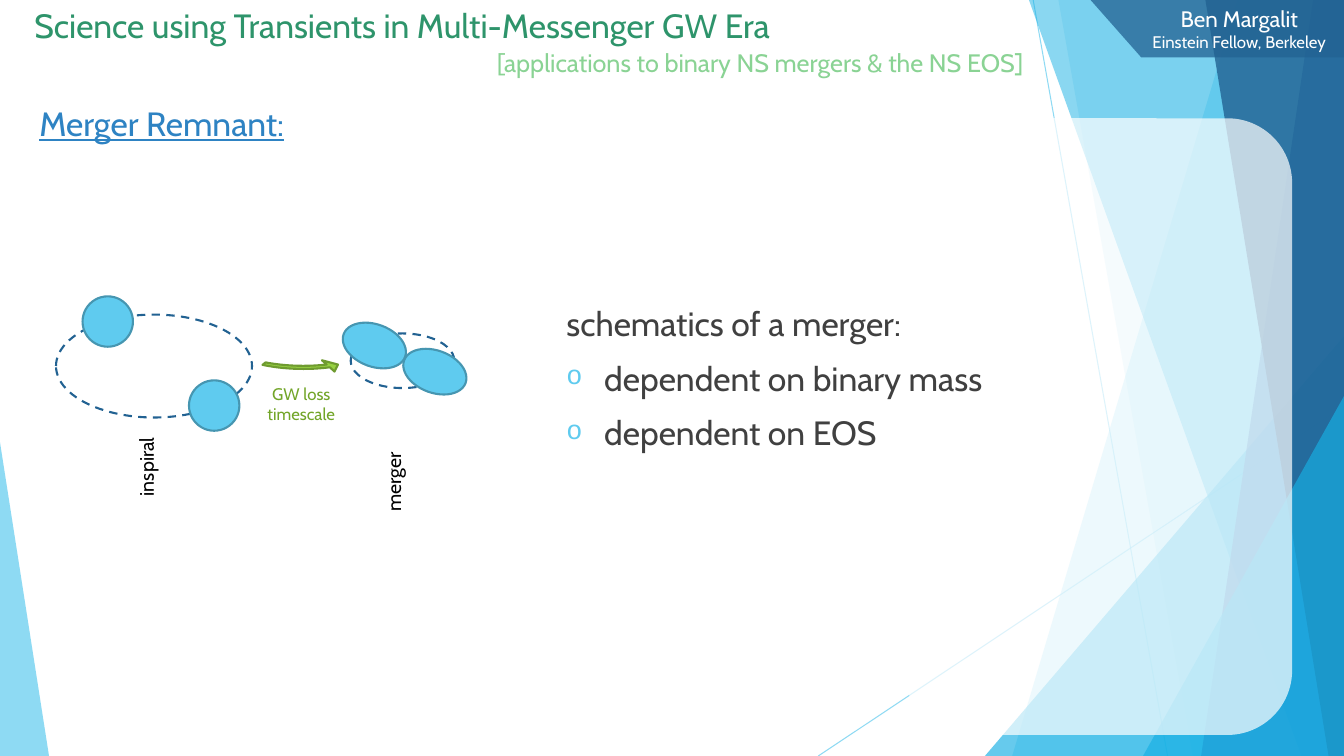
from pptx import Presentation
from pptx.dml.color import RGBColor
from pptx.enum.dml import MSO_LINE
from pptx.enum.shapes import MSO_CONNECTOR, MSO_SHAPE
from pptx.enum.text import MSO_ANCHOR, PP_ALIGN
from pptx.oxml.ns import qn
from pptx.util import Pt
from lxml.etree import SubElement

FONT = "Cabin"
C = {"sky": "5FCBEF", "cyan": "17B0E4", "blue": "2E83C3", "navy": "226292",
     "rim": "4696B1", "white": "FFFFFF", "black": "000000", "body": "404040",
     "title": "2E946B", "subtitle": "8AD394", "arrow": "96D141",
     "arrow_rim": "6F9B30", "caption": "72A528"}


def set_alpha(fill_element, percent):
    color = next(fill_element.iter(qn("a:srgbClr")))
    SubElement(color, qn("a:alpha")).set("val", str(percent * 1000))


def paint(sp, fill=None, alpha=100, line=None, dashed=False):
    sp.shadow.inherit = False
    if fill:
        sp.fill.solid()
        sp.fill.fore_color.rgb = RGBColor.from_string(C[fill])
        if alpha < 100:
            set_alpha(sp._element.spPr.find(qn("a:solidFill")), alpha)
    else:
        sp.fill.background()
    if line:
        sp.line.color.rgb = RGBColor.from_string(C[line])
        sp.line.width = Pt(1.5)
        if dashed:
            sp.line.dash_style = MSO_LINE.DASH
    else:
        sp.line.fill.background()


def add_preset(s, kind, x, y, w, h, rotation=0, **style):
    sp = s.shapes.add_shape(kind, Pt(x), Pt(y), Pt(w), Pt(h))
    sp.rotation = rotation
    paint(sp, **style)
    return sp


def add_run(p, text, size, color, underline=None):
    r = p.add_run()
    r.text = text
    r.font.name = FONT
    r.font.size = Pt(size)
    r.font.color.rgb = RGBColor.from_string(C[color])
    r.font.underline = underline


def add_text(s, x, y, w, h, text, size, color, align=PP_ALIGN.CENTER,
             rotation=0, underline=None):
    """Add a wrapped text box and return its first paragraph and text frame."""
    sp = s.shapes.add_textbox(Pt(x), Pt(y), Pt(w), Pt(h))
    sp.rotation = rotation
    tf = sp.text_frame
    tf.word_wrap = True
    p = tf.paragraphs[0]
    p.alignment = align
    add_run(p, text, size, color, underline)
    return p, tf


def add_ray(s, x1, y1, x2, y2):
    line = s.shapes.add_connector(MSO_CONNECTOR.STRAIGHT, Pt(x1), Pt(y1), Pt(x2), Pt(y2))
    line.line.color.rgb = RGBColor.from_string(C["sky"])
    line.line.width = Pt(0.75)
    sppr = line._element.spPr
    set_alpha(sppr.find(qn("a:ln")), 70)
    SubElement(sppr, qn("a:effectLst"))


def add_slanted_band(s, top, bottom, right, height, color, alpha):
    """Fill from a slanted left edge to the right side of the slide."""
    builder = s.shapes.build_freeform(Pt(top), 0)
    builder.add_line_segments([(Pt(right), 0), (Pt(right), Pt(height)),
                               (Pt(bottom), Pt(height))])
    paint(builder.convert_to_shape(), color, alpha)


def add_corner_triangle(s, x, w, h, bottom, color, alpha, apex):
    sp = add_preset(s, MSO_SHAPE.ISOSCELES_TRIANGLE, x, bottom - h, w, h,
                    fill=color, alpha=alpha)
    sp.adjustments[0] = apex


def add_backdrop(s, w, h):
    add_ray(s, w - 222, 0, w - 126, h)
    add_ray(s, w, 290, w - 375.5, h)
    for top, bottom, color, alpha in [(884, 723, "sky", 36), (756, 852, "sky", 20)]:
        add_slanted_band(s, top, bottom, w, h, color, alpha)
    add_corner_triangle(s, w - 256.5, 256.5, 300, h, "cyan", 66, 1)
    for top, bottom, color, alpha in [(735, 929.5, "cyan", 50), (938, 858, "blue", 70),
                                      (861, 949, "navy", 80)]:
        add_slanted_band(s, top, bottom, w, h, color, alpha)
    add_corner_triangle(s, w - 143.5, 143.5, 257, h, "cyan", 66, 1)
    add_corner_triangle(s, 0, 35, 224, h, "sky", 70, 0)
    add_preset(s, MSO_SHAPE.ROUNDED_RECTANGLE, w - 314, 84.5, 277, 440.5,
               fill="white", alpha=70)


def add_header(s, x, y, w):
    # The tag is a tall shape turned on its side, so its box is centred first.
    tag_w, tag_h = 41, 181
    add_preset(s, MSO_SHAPE.FLOWCHART_MANUAL_INPUT, x + w - (tag_h + tag_w) / 2,
               y + (tag_w - tag_h) / 2, tag_w, tag_h, 270, fill="navy", alpha=75)
    add_text(s, x, y, 574.5, 40,
             "Science using Transients in Multi-Messenger GW Era", 24, "title")
    p, _ = add_text(s, x + w - 149.5, y, 149.5, 41, "Ben Margalit", 16, "white")
    p.add_line_break()
    add_run(p, "Einstein Fellow, Berkeley", 12, "white")
    add_text(s, x + 330, y + 30, 426, 29,
             "[applications to binary NS mergers & the NS EOS]", 18, "subtitle")


def add_binary(s, x, y, w, h, stars, star_w, star_h, tilt=0):
    """Dashed orbit in the given box with stars at offsets from its corner."""
    add_preset(s, MSO_SHAPE.OVAL, x, y, w, h, line="navy", dashed=True)
    for dx, dy in stars:
        add_preset(s, MSO_SHAPE.OVAL, x + dx, y + dy, star_w, star_h, tilt,
                   fill="sky", line="rim")


def add_loss_arrow(s, x, y, w, h):
    """Shallow arrow along the bottom of the box, from left to right."""
    arrow = add_preset(s, MSO_SHAPE.CIRCULAR_ARROW, x, y, w, h,
                       fill="arrow", line="arrow_rim")
    arrow._element.spPr.find(qn("a:xfrm")).set("flipV", "1")
    head, end, start = (degrees * 0.6 for degrees in (10.6, 307.5, 217.5))
    for i, value in enumerate([0.037, head, end, start, 0.1]):
        arrow.adjustments[i] = value


def add_merger_schematic(s, x, y):
    add_binary(s, x, y + 13, 140, 73.5, [(19, -13), (95, 47)], 36, 36)
    add_binary(s, x + 210.5, y + 26.5, 74, 39, [(36.7, 12.2), (-6.5, -6.5)],
               46.8, 30.2, 20.3)
    add_loss_arrow(s, x + 109, y - 3.7, 135.4, 60.5)

    for dx, dy, label in [(-7, 109.5, "inspiral"), (169.5, 120.3, "merger")]:
        add_text(s, x + dx, y + dy, 143.3, 24.5, label, 14, "black", rotation=270)

    caption = add_preset(s, MSO_SHAPE.RECTANGLE, x + 140.7, y + 59, 69, 36, fill="white")
    tf = caption.text_frame
    tf.word_wrap = True
    tf.vertical_anchor = MSO_ANCHOR.MIDDLE
    p = tf.paragraphs[0]
    p.alignment = PP_ALIGN.CENTER
    add_run(p, "GW loss timescale", 12, "caption")


def add_bullet(p, indent):
    ppr = p._p.get_or_add_pPr()
    ppr.set("marL", str(Pt(indent)))
    ppr.set("indent", str(-Pt(indent)))
    SubElement(SubElement(ppr, qn("a:buClr")), qn("a:srgbClr")).set("val", C["sky"])
    SubElement(ppr, qn("a:buSzPct")).set("val", "80000")
    SubElement(ppr, qn("a:buFont")).set("typeface", "Courier New")
    SubElement(ppr, qn("a:buChar")).set("char", "o")


def add_notes_list(s, x, y, w, h):
    _, tf = add_text(s, x, y, w, h, "schematics of a merger:", 24, "body", PP_ALIGN.LEFT)
    for item in ("dependent on binary mass", "dependent on EOS"):
        p = tf.add_paragraph()
        p.space_before = Pt(10)
        add_bullet(p, 27)
        add_run(p, item, 24, "body")


def main():
    prs = Presentation()
    prs.slide_width, prs.slide_height = Pt(960), Pt(540)
    s = prs.slides.add_slide(prs.slide_layouts[6])
    add_backdrop(s, 960, 540)
    add_header(s, 0, 0, 960)
    add_text(s, 21, 70, 626, 36, "Merger Remnant:", 24, "blue", PP_ALIGN.LEFT,
             underline=True)
    add_merger_schematic(s, 40, 211.7)
    add_notes_list(s, 397.5, 213, 391.5, 143)
    prs.save("out.pptx")


if __name__ == "__main__":
    main()
